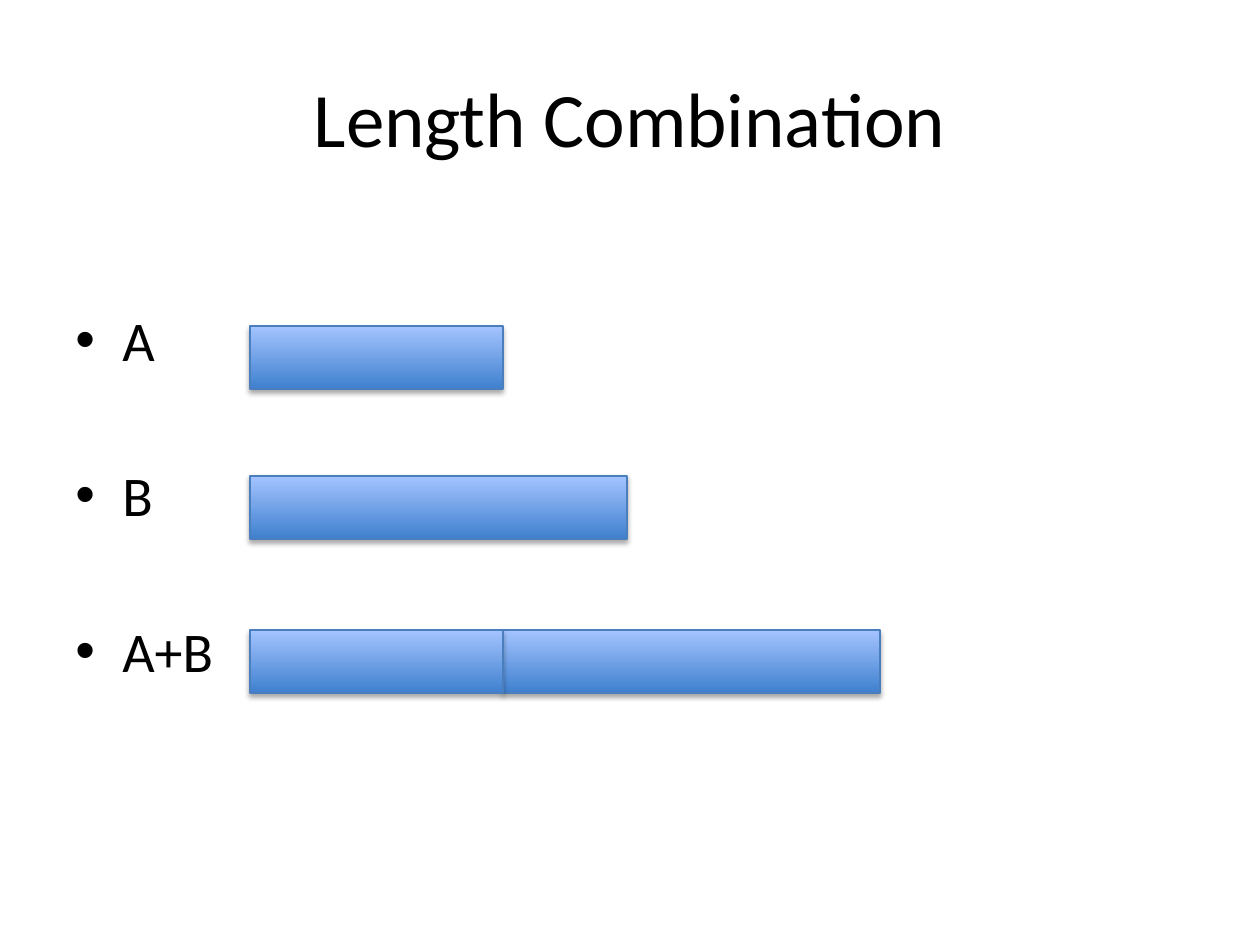
from lxml.etree import SubElement
from pptx import Presentation
from pptx.dml.color import RGBColor
from pptx.enum.shapes import MSO_SHAPE
from pptx.enum.text import MSO_ANCHOR, PP_ALIGN
from pptx.oxml.ns import qn
from pptx.util import Pt

PX = 914400 // 126


def rgb(value):
    return RGBColor.from_string(value)


def add_text(box, lines, size, anchor, paragraph_format):
    """Add a text box with one paragraph per line and return its paragraphs."""
    frame = slide.shapes.add_textbox(*(n * PX for n in box)).text_frame
    frame.word_wrap = True
    frame.vertical_anchor = anchor
    frame.text = "\n".join(lines)
    for paragraph in frame.paragraphs:
        for key, value in paragraph_format.items():
            setattr(paragraph, key, value)
        for key, value in {"name": "Calibri", "size": Pt(size)}.items():
            setattr(paragraph.runs[0].font, key, value)
        paragraph.runs[0].font.color.rgb = rgb("000000")
    return frame.paragraphs


deck = Presentation()
deck.slide_width, deck.slide_height = 1260 * PX, 945 * PX
slide = deck.slides.add_slide(deck.slide_layouts[6])

add_text((63, 38, 1134, 157), ["Length Combination"], 44,
         MSO_ANCHOR.MIDDLE, {"alignment": PP_ALIGN.CENTER})

labels = add_text((63, 299, 1134, 545), ["A", "B", "A+B"], 32,
                  MSO_ANCHOR.TOP, {"alignment": PP_ALIGN.LEFT})
for index, label in enumerate(labels):
    label.space_before = Pt(50.5 if index else 0)
    properties = label._p.get_or_add_pPr()
    properties.set("marL", str(47 * PX))
    properties.set("indent", str(-47 * PX))
    SubElement(properties, qn("a:buFont"), typeface="Arial")
    SubElement(properties, qn("a:buChar"), char="•")

start, bar_height = 250, 63
length_a, length_b = 253, 377
row_a, row_b, row_sum = 326, 476, 630
bars = [
    (start, row_a, length_a),
    (start + length_a, row_sum, length_b),
    (start, row_sum, length_a),
    (start, row_b, length_b),
]
for left, top, length in bars:
    bar = slide.shapes.add_shape(
        MSO_SHAPE.RECTANGLE, *(n * PX for n in (left, top, length, bar_height)))
    bar.fill.gradient()
    bar.fill.gradient_angle = 90
    for stop, color in zip(bar.fill.gradient_stops, ("3F80CE", "A4C4FF")):
        stop.color.rgb = rgb(color)
    bar.line.color.rgb = rgb("4B7EBC")
    bar.line.width = Pt(0.75)

    bar.shadow.inherit = False
    effects = bar._element.spPr.find(qn("a:effectLst"))
    shadow = SubElement(effects, qn("a:outerShdw"), blurRad=str(Pt(3.1)),
                        dist=str(Pt(1.8)), dir="5400000", rotWithShape="0")
    shade = SubElement(shadow, qn("a:srgbClr"), val="000000")
    SubElement(shade, qn("a:alpha"), val="35000")

deck.save("out.pptx")
